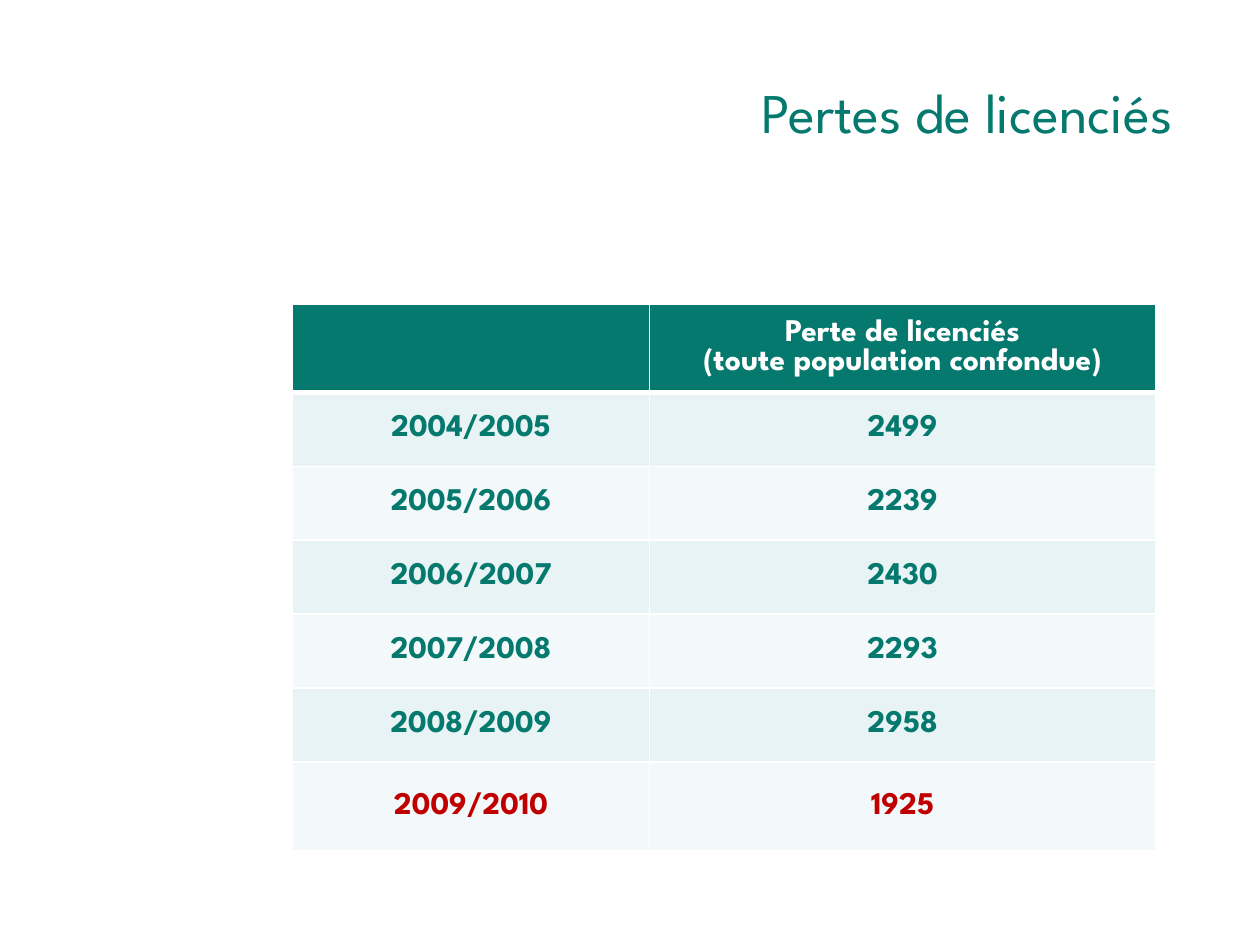
import pptx
import pptx.dml.color
import pptx.enum.text
import pptx.oxml
import pptx.oxml.ns
import pptx.util
from pptx.util import Cm

TITLE = "Pertes de licenciés"
HEADER = ["", "Perte de licenciés\n(toute population confondue)"]
LOSSES = [
    ("2004/2005", "2499"),
    ("2005/2006", "2239"),
    ("2006/2007", "2430"),
    ("2007/2008", "2293"),
    ("2008/2009", "2958"),
    ("2009/2010", "1925"),
]
FONT = "League Spartan"
GREEN, RED, WHITE = "05796E", "C00000", "FFFFFF"
BANDS = ["E7F3F4", "F3F9FA"]
COLUMN_WIDTHS = [7.19, 10.21]
HEADER_HEIGHT, ROW_HEIGHT, LAST_HEIGHT = 1.78, 1.49, 1.8
HEADER_BORDERS = {"lnL": 1, "lnR": 1, "lnT": 1, "lnB": 3}


def color(value):
    return pptx.dml.color.RGBColor.from_string(value)


def write(frame, text, size, ink, bold, align):
    for index, line in enumerate(text.split("\n")):
        para = frame.paragraphs[0] if index == 0 else frame.add_paragraph()
        para.alignment = align
        if line:
            span = para.add_run()
            span.text = line
            span.font.name = FONT
            span.font.size = pptx.util.Pt(size)
            span.font.bold = bold
            span.font.color.rgb = color(ink)


def add_borders(cell, widths):
    """Put white borders before the fill, as the cell schema requires."""
    properties = cell._tc.get_or_add_tcPr()
    for index, (side, points) in enumerate(widths.items()):
        properties.insert(index, pptx.oxml.parse_xml(
            f'<a:{side} {pptx.oxml.ns.nsdecls("a")} w="{pptx.util.Pt(points)}">'
            f'<a:solidFill><a:srgbClr val="{WHITE}"/></a:solidFill></a:{side}>'))


def add_title(page):
    title = page.shapes.title
    title.left, title.top, title.width, title.height = Cm(0), Cm(1.32), Cm(23.9), Cm(1.85)
    title.text_frame.vertical_anchor = pptx.enum.text.MSO_ANCHOR.MIDDLE
    write(title.text_frame, TITLE, 32, GREEN, False, pptx.enum.text.PP_ALIGN.RIGHT)


def add_losses(page):
    rows = [HEADER, *LOSSES]
    last = len(rows) - 1
    heights = [HEADER_HEIGHT] + [ROW_HEIGHT] * (last - 1) + [LAST_HEIGHT]
    table = page.shapes.add_table(
        len(rows), len(HEADER), Cm(5.9), Cm(6.13),
        Cm(sum(COLUMN_WIDTHS)), Cm(sum(heights))).table
    for column, width in zip(table.columns, COLUMN_WIDTHS):
        column.width = Cm(width)
    for number, values in enumerate(rows):
        table.rows[number].height = Cm(heights[number])
        fill = BANDS[(number - 1) % 2] if number else GREEN
        ink = WHITE if number == 0 else RED if number == last else GREEN
        for cell, text in zip(table.rows[number].cells, values):
            cell.vertical_anchor = pptx.enum.text.MSO_ANCHOR.MIDDLE
            if number < last:
                cell.margin_left = cell.margin_right = Cm(0.13)
                cell.margin_top = cell.margin_bottom = Cm(0)
            cell.fill.solid()
            cell.fill.fore_color.rgb = color(fill)
            if number == 0:
                add_borders(cell, HEADER_BORDERS)
            write(cell.text_frame, text, 18, ink, True, pptx.enum.text.PP_ALIGN.CENTER)


def main():
    deck = pptx.Presentation()
    deck.slide_width, deck.slide_height = Cm(25.4), Cm(19.05)
    page = deck.slides.add_slide(deck.slide_layouts[5])
    add_title(page)
    add_losses(page)
    deck.save("out.pptx")


if __name__ == "__main__":
    main()
